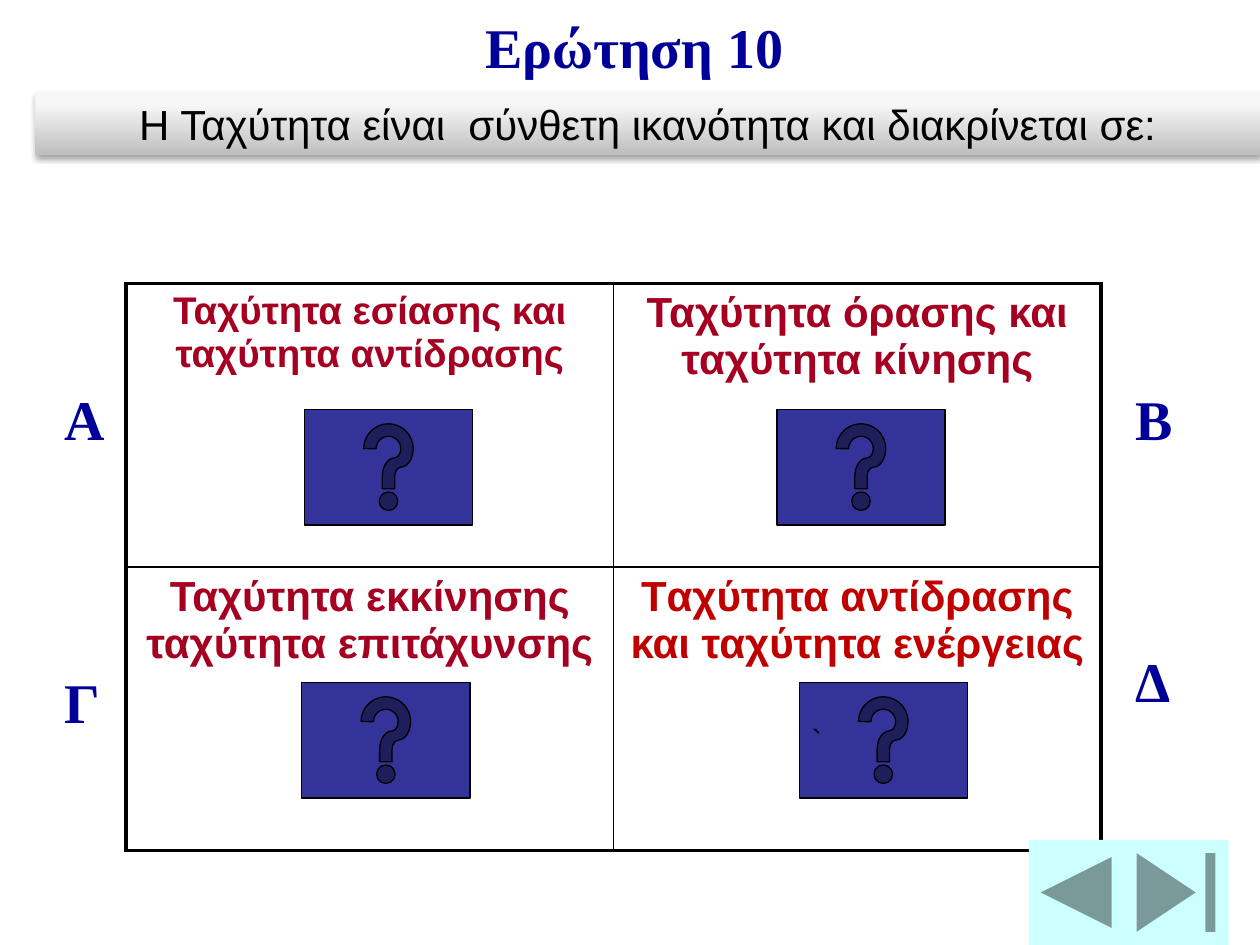
from pptx import Presentation
from pptx import util as u
from pptx.dml import color as clr
from pptx.enum import shapes as sh, text as tx
from pptx.oxml import parse_xml
from pptx.oxml import ns

PX = 9525  # EMU in one px, 96 px to the inch
HUES = {"navy": "000099", "wine": "A50021", "red": "C00000", "blue": "333399",
        "aqua": "CCFFFF", "black": "000000", "white": "FFFFFF",
        "grey": "BEBEBE", "pale": "F7F7F7"}
SERIF, SANS = "Times New Roman", "Arial"
KIND = sh.MSO_SHAPE
LEFT, MID = tx.PP_ALIGN.LEFT, tx.PP_ALIGN.CENTER
TOP, HALF = tx.MSO_ANCHOR.TOP, tx.MSO_ANCHOR.MIDDLE


def rgb(hue):
    return clr.RGBColor.from_string(HUES[hue])


def write(frame, words, size=32, font=SERIF, hue="navy", bold=True,
          align=LEFT, anchor=None, wrap=True):
    if anchor is not None:
        frame.auto_size = tx.MSO_AUTO_SIZE.NONE
        frame.word_wrap = wrap
        frame.vertical_anchor = anchor
    par = frame.paragraphs[0]
    par.alignment = align
    run = par.add_run()
    run.text = words
    run.font.size, run.font.name, run.font.bold = u.Pt(size), font, bold
    run.font.color.rgb = rgb(hue)


class Page:
    def __init__(self, deck):
        self.slide = deck.slides.add_slide(deck.slide_layouts[5])
        self.items = self.slide.shapes

    def title(self, words, *box):
        head = self.items.title
        head.left, head.top, head.width, head.height = (n * PX for n in box)
        write(head.text_frame, words, anchor=TOP)

    def label(self, words, *box):
        note = self.items.add_textbox(*(n * PX for n in box))
        write(note.text_frame, words, anchor=TOP)

    def shape(self, kind, *box, fill=None, line=None):
        item = self.items.add_shape(kind, *(n * PX for n in box))
        item.shadow.inherit = False
        if fill:
            item.fill.solid()
            item.fill.fore_color.rgb = rgb(fill)
        if line:
            item.line.color.rgb = rgb(line)
            item.line.width = u.Pt(0.75)
        else:
            item.line.fill.background()
        return item

    def banner(self, words, *box):
        bar = self.shape(KIND.RECTANGLE, *box)
        bar.fill.gradient()
        bar.fill.gradient_angle = 90
        for stop, hue, place in zip(bar.fill.gradient_stops,
                                    ("grey", "pale"), (0, 0.8)):
            stop.color.rgb = rgb(hue)
            stop.position = place
        glow = bar.element.spPr.find(ns.qn("a:effectLst"))
        glow.append(parse_xml(
            f'<a:outerShdw {ns.nsdecls("a")} blurRad="{u.Pt(3.1)}" '
            f'dist="{u.Pt(1.8)}" dir="5400000" rotWithShape="0">'
            f'<a:srgbClr val="{HUES["black"]}"><a:alpha val="35000"/>'
            '</a:srgbClr></a:outerShdw>'))
        write(bar.text_frame, words, 24, SANS, "black", False, MID, TOP)

    def table(self, rows, *box):
        high, wide = len(rows), len(rows[0])
        grid = self.items.add_table(high, wide, *(n * PX for n in box)).table
        grid.first_row = grid.horz_banding = False
        for r, row in enumerate(rows):
            for c, (words, size, hue) in enumerate(row):
                cell = grid.cell(r, c)
                outer = {"L": c == 0, "R": c == wide - 1,
                         "T": r == 0, "B": r == high - 1}
                self.edges(cell, outer)
                cell.fill.solid()
                cell.fill.fore_color.rgb = rgb("white")
                write(cell.text_frame, words, size, SANS, hue, align=MID)

    def edges(self, cell, outer):
        props = cell._tc.get_or_add_tcPr()
        for side, thick in outer.items():
            props.append(parse_xml(
                f'<a:ln{side} {ns.nsdecls("a")} '
                f'w="{u.Pt(2.25 if thick else 1)}"><a:solidFill>'
                f'<a:srgbClr val="{HUES["black"]}"/></a:solidFill>'
                f'</a:ln{side}>'))


def main():
    deck = Presentation()
    deck.slide_width, deck.slide_height = 960 * PX, 720 * PX
    page = Page(deck)

    # Question
    page.title("Ερώτηση 10", 360, 5, 256, 61)

    # Answers
    page.table([
        [("Ταχύτητα εσίασης και ταχύτητα αντίδρασης", 22, "wine"),
         ("Ταχύτητα όρασης και ταχύτητα κίνησης", 24, "wine")],
        [("Ταχύτητα εκκίνησης ταχύτητα επιτάχυνσης", 24, "wine"),
         ("Tαχύτητα αντίδρασης και ταχύτητα ενέργειας", 24, "red")],
    ], 96, 216, 743, 432)
    for mark, x, y in (("Α", 40, 288), ("Γ", 40, 504),
                       ("Β", 856, 288), ("Δ", 856, 488)):
        page.label(mark, x, y, 48, 60)

    # Help buttons, one in each cell
    for x, y, mark in ((609, 520, "`"), (230, 520, ""),
                       (592, 312, ""), (232, 312, "")):
        key = page.shape(KIND.ACTION_BUTTON_HELP, x, y, 128, 88,
                         fill="blue", line="black")
        if mark:
            write(key.text_frame, mark, 18, SANS, "black", False,
                  anchor=HALF, wrap=False)

    # Navigation buttons
    page.shape(KIND.ACTION_BUTTON_END, 856, 640, 80, 80, fill="aqua")
    page.shape(KIND.ACTION_BUTTON_BACK_OR_PREVIOUS, 784, 640, 72, 80,
               fill="aqua")

    # Statement bar
    page.banner(" Η Ταχύτητα είναι  σύνθετη ικανότητα και διακρίνεται σε: ",
                27, 70, 933, 48)
    deck.save("out.pptx")


if __name__ == "__main__":
    main()
